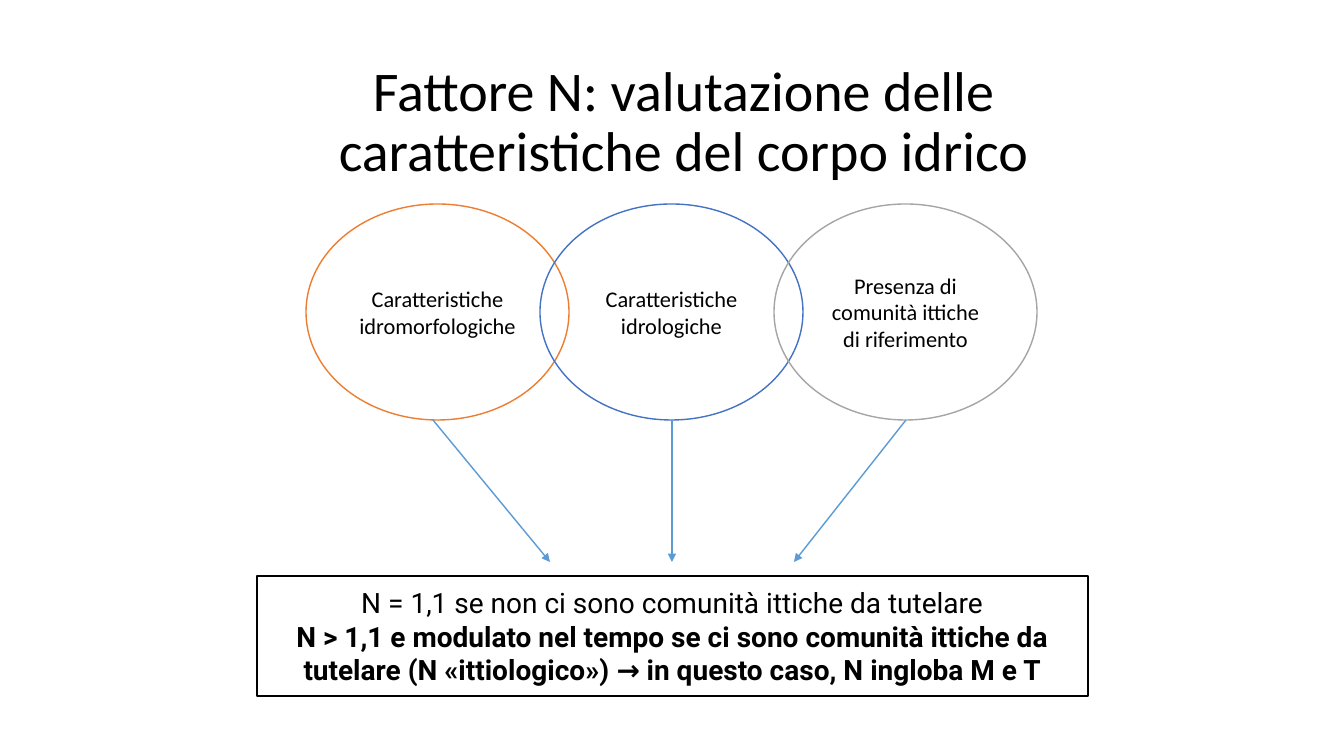
"""Build the slide on factor N and the features of the water body."""
import pptx
import pptx.dml.color
import pptx.enum.shapes
import pptx.enum.text
import pptx.oxml
import pptx.oxml.ns
import pptx.util

RGBColor = pptx.dml.color.RGBColor
MSO_SHAPE = pptx.enum.shapes.MSO_SHAPE
MSO_ANCHOR = pptx.enum.text.MSO_ANCHOR

BLACK = RGBColor(0x00, 0x00, 0x00)
ORANGE = RGBColor(0xED, 0x7D, 0x31)
BLUE = RGBColor(0x44, 0x72, 0xC4)
GREY = RGBColor(0xA5, 0xA5, 0xA5)
ARROW_BLUE = RGBColor(0x5B, 0x9B, 0xD5)

EMU_PER_PX = 914400 / 100.8
SLIDE_W, SLIDE_H = 1344, 756
OVAL_LEFT, OVAL_TOP, OVAL_W, OVAL_H, OVAL_STEP = 306, 204, 263, 216, 234
ARROW_TOP, ARROW_BOTTOM = OVAL_TOP + OVAL_H, 562

FEATURES = [
    ("Caratteristiche idromorfologiche", ORANGE),
    ("Caratteristiche idrologiche", BLUE),
    ("Presenza di comunità ittiche di riferimento", GREY),
]
ARROWS = [(433, 550), (672, 672), (906, 794)]
RESULTS = [
    ("N = 1,1 se non ci sono comunità ittiche da tutelare", False),
    ("N > 1,1 e modulato nel tempo se ci sono comunità ittiche da tutelare "
     "(N «ittiologico») → in questo caso, N ingloba M e T", True),
]


def px(n):
    return pptx.util.Emu(round(n * EMU_PER_PX))


def fill_text(tf, lines, font, size, anchor=MSO_ANCHOR.MIDDLE, spacing=None):
    tf.word_wrap = True
    tf.auto_size = pptx.enum.text.MSO_AUTO_SIZE.NONE
    tf.vertical_anchor = anchor
    for i, (text, bold) in enumerate(lines):
        p = tf.add_paragraph() if i else tf.paragraphs[0]
        p.alignment = pptx.enum.text.PP_ALIGN.CENTER
        p.line_spacing = spacing
        r = p.add_run()
        r.text = text
        r.font.name = font
        r.font.size = pptx.util.Pt(size)
        r.font.bold = bold
        r.font.color.rgb = BLACK


def add_title(s, text):
    sp = s.shapes.title
    sp.left, sp.top, sp.width, sp.height = px(218), px(31), px(931), px(158)
    fill_text(sp.text_frame, [(text, False)], "Calibri", 40,
              MSO_ANCHOR.BOTTOM, 0.9)


def add_outline(s, kind, box, color, width):
    sp = s.shapes.add_shape(kind, *map(px, box))
    sp.shadow.inherit = False
    sp.fill.background()
    sp.line.color.rgb = color
    sp.line.width = pptx.util.Pt(width)
    return sp


def add_arrow(s, x1, x2):
    line = s.shapes.add_connector(
        pptx.enum.shapes.MSO_CONNECTOR.STRAIGHT,
        px(x1), px(ARROW_TOP), px(x2), px(ARROW_BOTTOM))
    line.line.color.rgb = ARROW_BLUE
    line.line.width = pptx.util.Pt(1)
    ns = pptx.oxml.ns.nsdecls("a")
    ln = line.line._get_or_add_ln()
    ln.append(pptx.oxml.parse_xml(f'<a:tailEnd {ns} type="triangle"/>'))
    ln.addnext(pptx.oxml.parse_xml(f"<a:effectLst {ns}/>"))


def main():
    prs = pptx.Presentation()
    prs.slide_width, prs.slide_height = px(SLIDE_W), px(SLIDE_H)
    s = prs.slides.add_slide(prs.slide_layouts[0])
    subtitle = s.placeholders[1].element
    subtitle.getparent().remove(subtitle)

    add_title(s, "Fattore N: valutazione delle caratteristiche del corpo idrico")
    for i, (text, color) in enumerate(FEATURES):
        box = (OVAL_LEFT + i * OVAL_STEP, OVAL_TOP, OVAL_W, OVAL_H)
        sp = add_outline(s, MSO_SHAPE.OVAL, box, color, 1)
        fill_text(sp.text_frame, [(text, False)], "Calibri", 16)
    for x1, x2 in ARROWS:
        add_arrow(s, x1, x2)
    sp = add_outline(s, MSO_SHAPE.RECTANGLE, (257, 576, 831, 120), BLACK, 1.5)
    fill_text(sp.text_frame, RESULTS, "Roboto", 20)

    prs.save("out.pptx")


if __name__ == "__main__":
    main()
